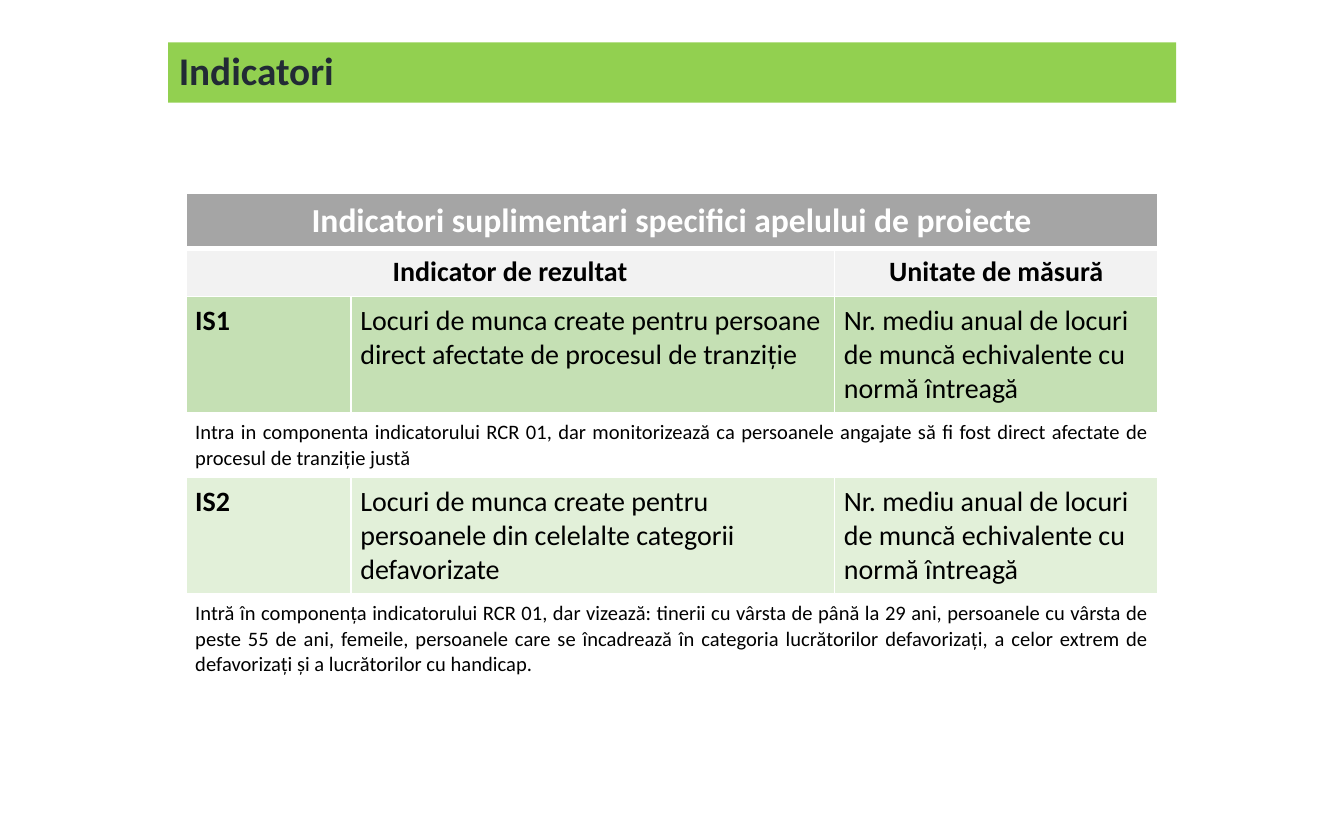
from dataclasses import dataclass

from lxml import etree
from pptx import Presentation
from pptx.dml.color import RGBColor
from pptx.enum.shapes import MSO_SHAPE
from pptx.enum.text import MSO_ANCHOR, PP_ALIGN
from pptx.oxml.ns import qn
from pptx.util import Cm, Pt

RECTANGLE = MSO_SHAPE.RECTANGLE
MIDDLE = MSO_ANCHOR.MIDDLE
LEFT, CENTER, JUSTIFY = PP_ALIGN.LEFT, PP_ALIGN.CENTER, PP_ALIGN.JUSTIFY


@dataclass(frozen=True)
class Theme:
    font: str = "Calibri"
    banner: str = "92D050"
    banner_text: str = "222A35"
    header: str = "A5A5A5"
    subheader: str = "F2F2F2"
    green: str = "C5E0B4"
    pale_green: str = "E2F0D9"
    white: str = "FFFFFF"
    black: str = "000000"
    banner_size: float = 21
    header_size: float = 18
    body_size: float = 15
    note_size: float = 11
    thin_border: float = 0.96
    thick_border: float = 3


THEME = Theme()


@dataclass(frozen=True)
class CellText:
    text: str
    span: int = 1
    bold: bool = False


@dataclass(frozen=True)
class TableRow:
    height: float
    cells: tuple[CellText, ...]
    fill: str | None = None
    size: float = THEME.body_size
    color: str = THEME.black
    align: PP_ALIGN = LEFT
    top_border: float = THEME.thin_border
    bottom_border: float = THEME.thin_border


def indicator_row(code: str, name: str, fill: str) -> TableRow:
    unit = "Nr. mediu anual de locuri de muncă echivalente cu normă întreagă"
    return TableRow(2.08, (CellText(code, bold=True), CellText(name), CellText(unit)), fill)


def note_row(height: float, text: str) -> TableRow:
    return TableRow(height, (CellText(text, span=3),), size=THEME.note_size, align=JUSTIFY)


COLUMN_WIDTHS = (3.12, 9.14, 6.12)
ROWS = (
    TableRow(0.94, (CellText("Indicatori suplimentari specifici apelului de proiecte", 3, True),),
             THEME.header, THEME.header_size, THEME.white, CENTER,
             bottom_border=THEME.thick_border),
    TableRow(0.81, (CellText("Indicator de rezultat", 2, True),
                    CellText("Unitate de măsură", bold=True)),
             THEME.subheader, align=CENTER, top_border=THEME.thick_border),
    indicator_row("IS1", "Locuri de munca create pentru persoane direct afectate de "
                  "procesul de tranziție", THEME.green),
    note_row(1.07, "Intra in componenta indicatorului RCR 01, dar monitorizează ca persoanele "
             "angajate să fi fost direct afectate de procesul de tranziție justă"),
    indicator_row("IS2", "Locuri de munca create pentru persoanele din celelalte categorii "
                  "defavorizate", THEME.pale_green),
    note_row(1.52, "Intră în componența indicatorului RCR 01, dar vizează: tinerii cu vârsta de "
             "până la 29 ani, persoanele cu vârsta de peste 55 de ani, femeile, persoanele care "
             "se încadrează în categoria lucrătorilor defavorizați, a celor extrem de "
             "defavorizați și a lucrătorilor cu handicap."),
)


def format_text(text_frame, size: float, color: str, bold: bool, align: PP_ALIGN) -> None:
    for paragraph in text_frame.paragraphs:
        paragraph.alignment = align
        for run in paragraph.runs:
            run.font.name = THEME.font
            run.font.size = Pt(size)
            run.font.bold = bold
            run.font.color.rgb = RGBColor.from_string(color)


def set_borders(cell, top: float, bottom: float) -> None:
    properties = cell._tc.get_or_add_tcPr()
    widths = {"a:lnL": THEME.thin_border, "a:lnR": THEME.thin_border,
              "a:lnT": top, "a:lnB": bottom}
    for position, (tag, width) in enumerate(widths.items()):
        line = etree.Element(qn(tag), w=str(Pt(width)))
        fill = etree.SubElement(line, qn("a:solidFill"))
        etree.SubElement(fill, qn("a:srgbClr"), val=THEME.white)
        properties.insert(position, line)


def add_banner(slide, text: str) -> None:
    shape = slide.shapes.add_shape(RECTANGLE, Cm(3.18), Cm(0.8), Cm(19.05), Cm(1.14))
    shape.shadow.inherit = False
    shape.fill.solid()
    shape.fill.fore_color.rgb = RGBColor.from_string(THEME.banner)
    shape.line.fill.background()
    text_frame = shape.text_frame
    text_frame.text = text
    text_frame.word_wrap = True
    text_frame.vertical_anchor = MIDDLE
    text_frame.margin_left = text_frame.margin_right = Cm(0.2)
    text_frame.margin_top = text_frame.margin_bottom = Cm(0.1)
    text_frame.paragraphs[0].line_spacing = 0.9
    format_text(text_frame, THEME.banner_size, THEME.banner_text, True, LEFT)


def style_cell(cell, row: TableRow) -> None:
    cell.margin_left = cell.margin_right = Cm(0.18)
    cell.margin_top = cell.margin_bottom = Cm(0.13)
    if row.fill:
        cell.fill.solid()
        cell.fill.fore_color.rgb = RGBColor.from_string(row.fill)
    else:
        cell.fill.background()
    set_borders(cell, row.top_border, row.bottom_border)


def add_indicator_table(slide, rows: tuple[TableRow, ...]) -> None:
    table = slide.shapes.add_table(
        len(rows), len(COLUMN_WIDTHS), Cm(3.51), Cm(3.66),
        Cm(sum(COLUMN_WIDTHS)), Cm(sum(row.height for row in rows))).table
    table.first_row = table.horz_banding = False
    for column, width in zip(table.columns, COLUMN_WIDTHS):
        column.width = Cm(width)
    for row_index, row in enumerate(rows):
        table.rows[row_index].height = Cm(row.height)
        for cell in table.rows[row_index].cells:
            style_cell(cell, row)
        column_index = 0
        for content in row.cells:
            cell = table.cell(row_index, column_index)
            column_index += content.span
            if content.span > 1:
                cell.merge(table.cell(row_index, column_index - 1))
            cell.text_frame.text = content.text
            format_text(cell.text_frame, row.size, row.color, content.bold, row.align)


def main() -> None:
    presentation = Presentation()
    presentation.slide_width, presentation.slide_height = Cm(25.4), Cm(15.88)
    slide = presentation.slides.add_slide(presentation.slide_layouts[6])

    # Title banner
    add_banner(slide, "Indicatori")

    # Indicators with their units and notes
    add_indicator_table(slide, ROWS)

    presentation.save("out.pptx")


if __name__ == "__main__":
    main()
